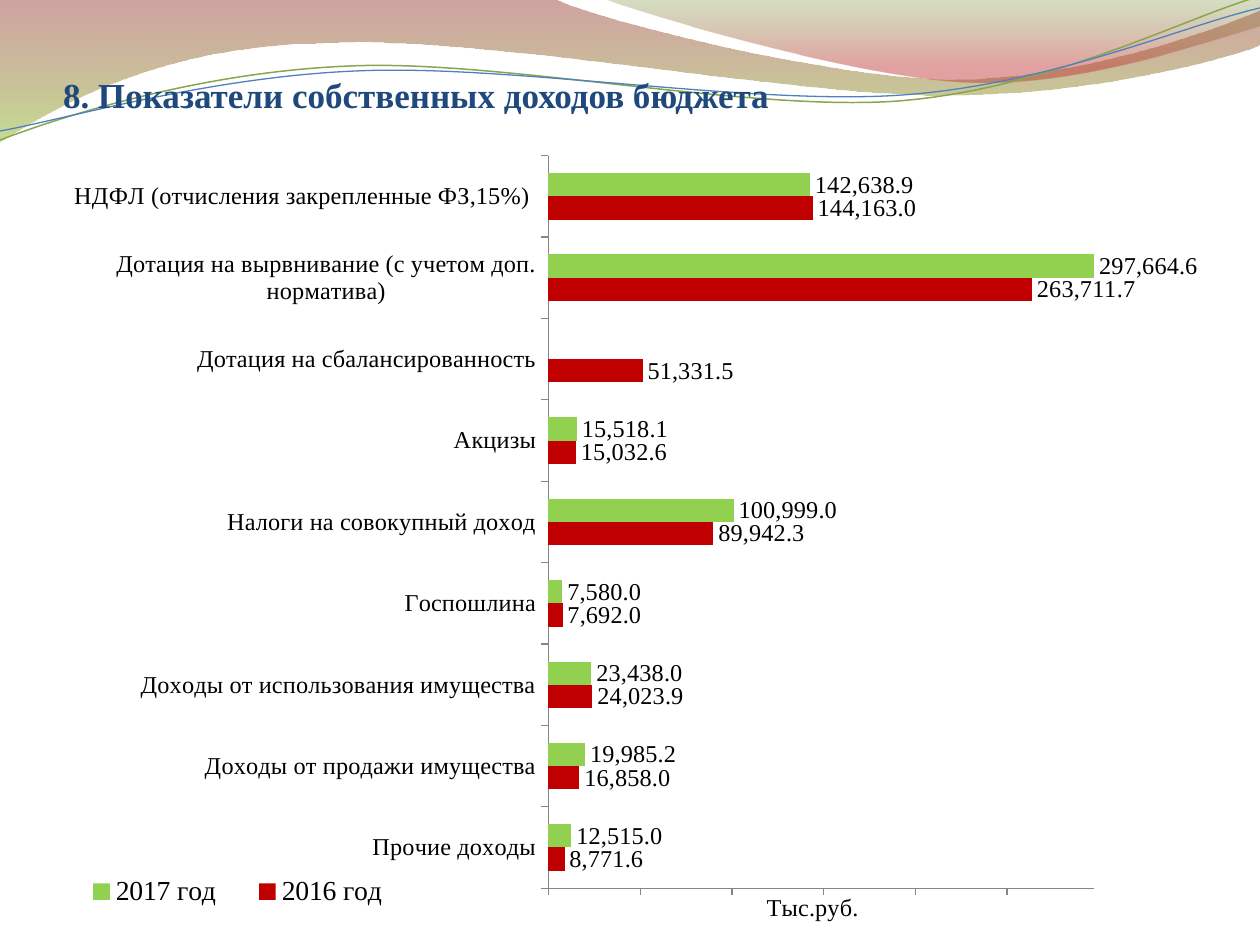
import dataclasses

import pptx
import pptx.chart.data
import pptx.dml.color
import pptx.enum.chart
import pptx.enum.text
import pptx.oxml
import pptx.oxml.ns
import pptx.util


@dataclasses.dataclass(frozen=True)
class Theme:
    font: str = "Times New Roman"
    title: str = "1F497D"
    text: str = "000000"
    axis: str = "868686"
    year_2016: str = "C00000"
    year_2017: str = "92D050"
    green_line: str = "89A54F"
    blue_line: str = "4F81BD"
    left_wave: tuple = ((0, "973330", 45), (1, "95C238", 55))
    right_wave: tuple = ((0, "769537", 30), (0.8, "BE3330", 45))
    title_size: int = 20
    legend_size: int = 16
    label_size: int = 14


THEME = Theme()
EMU_PER_PX = 914400 / 126
CHART_WIDTH, CHART_HEIGHT = 1134, 774
NUMBER_FORMAT = "#,##0.0"

LEFT_WAVE = [
    (0, 0), (554, -1),
    (600, 21, 837, 79, 955, 79), (1075, 79, 1207, 33, 1260, 11),
    (1261, 45),
    (1239, 55, 1096, 96, 940, 95), (784, 95, 481, 35, 324, 43),
    (163, 45, 58, 105, -1, 142),
]
RIGHT_WAVE = [
    (604, -1),
    (641, 14, 859, 78, 969, 82), (1079, 87, 1211, 40, 1260, 26),
    (1260, 0),
]
GREEN_LINE = [
    (0, 140),
    (60, 117, 199, 72, 349, 66), (498, 59, 747, 112, 898, 101),
    (1050, 89, 1182, 19, 1257, -3),
]
BLUE_LINE = [
    (0, 131),
    (59, 121, 207, 77, 357, 71), (508, 64, 752, 106, 903, 95),
    (1053, 84, 1182, 26, 1260, 8),
]
INCOME = [
    ("Прочие доходы", 8771.6, 12515),
    ("Доходы от продажи имущества", 16858, 19985.2),
    (" Доходы от использования имущества", 24023.9, 23438),
    ("Госпошлина", 7692, 7580),
    ("Налоги на совокупный доход", 89942.3, 100999),
    ("Акцизы", 15032.6, 15518.1),
    ("Дотация на сбалансированность", 51331.5, None),
    ("Дотация на вырвнивание (с учетом доп. норматива)", 263711.7, 297664.6),
    ("НДФЛ (отчисления закрепленные ФЗ,15%) ", 144163, 142638.9),
]


def px(n):
    return pptx.util.Emu(round(n * EMU_PER_PX))


def rgb(color):
    return pptx.dml.color.RGBColor.from_string(color)


def new_element(tag, **attributes):
    element = pptx.oxml.xmlchemy.OxmlElement(tag)
    for name, value in attributes.items():
        element.set(name, str(value))
    return element


def set_font(font, size, color=THEME.text, bold=False):
    font.name = THEME.font
    font.size = pptx.util.Pt(size)
    font.bold = bold
    font.color.rgb = rgb(color)


def add_outline(slide, outline, closed):
    points = [(px(part[-2]), px(part[-1])) for part in outline]
    builder = slide.shapes.build_freeform(*points[0])
    builder.add_line_segments(points[1:], close=closed)
    sp = builder.convert_to_shape()
    sp.shadow.inherit = False
    for segment, part in zip(sp._element.xpath(".//a:lnTo"), outline[1:]):
        if len(part) == 6:
            curve = new_element("a:cubicBezTo")
            for x, y in zip(part[::2], part[1::2]):
                curve.append(new_element("a:pt", x=px(x) - sp.left, y=px(y) - sp.top))
            segment.getparent().replace(segment, curve)
    return sp


def add_wave(slide, outline, stops):
    sp = add_outline(slide, outline, closed=True)
    sp.line.fill.background()
    sp.fill.gradient()
    sp.fill.gradient_angle = 270
    for stop, (position, color, _) in zip(sp.fill.gradient_stops, stops):
        stop.position = position
        stop.color.rgb = rgb(color)
    for clr, (_, _, opacity) in zip(sp._element.spPr.xpath(".//a:gs/a:srgbClr"), stops):
        clr.append(new_element("a:alpha", val=opacity * 1000))


def add_curve(slide, outline, color, width):
    sp = add_outline(slide, outline, closed=False)
    sp.fill.background()
    sp.line.color.rgb = rgb(color)
    sp.line.width = pptx.util.Pt(width)


def set_title(slide, text):
    sp = slide.shapes.title
    slide.shapes._spTree.append(sp._element)
    sp.left, sp.top, sp.width, sp.height = px(63), px(67), px(1134), px(49)
    tf = sp.text_frame
    tf.text = text
    tf.word_wrap = True
    tf.auto_size = pptx.enum.text.MSO_AUTO_SIZE.NONE
    tf.vertical_anchor = pptx.enum.text.MSO_ANCHOR.BOTTOM
    tf.margin_left = tf.margin_right = tf.margin_bottom = 0
    tf.margin_top = px(6)
    p = tf.paragraphs[0]
    p.alignment = pptx.enum.text.PP_ALIGN.LEFT
    set_font(p.font, THEME.title_size, THEME.title, bold=True)


def place(element, index, x, y, size=None, inner=False):
    for old in element.findall(pptx.oxml.ns.qn("c:layout")):
        element.remove(old)
    settings = {"layoutTarget": "inner"} if inner else {}
    settings.update(xMode="edge", yMode="edge", x=x / CHART_WIDTH, y=y / CHART_HEIGHT)
    if size:
        settings.update(w=size[0] / CHART_WIDTH, h=size[1] / CHART_HEIGHT)
    layout = new_element("c:layout")
    manual = new_element("c:manualLayout")
    layout.append(manual)
    for name, value in settings.items():
        manual.append(new_element("c:" + name, val=value))
    element.insert(index, layout)


def format_series(series, color):
    series.format.fill.solid()
    series.format.fill.fore_color.rgb = rgb(color)
    series.invert_if_negative = False
    labels = series.data_labels
    labels.show_value = True
    labels.number_format = NUMBER_FORMAT
    labels.number_format_is_linked = False
    labels.position = pptx.enum.chart.XL_LABEL_POSITION.OUTSIDE_END
    set_font(labels.font, THEME.label_size)


def format_axes(chart):
    for axis in (chart.category_axis, chart.value_axis):
        axis.has_major_gridlines = False
        axis.major_tick_mark = pptx.enum.chart.XL_TICK_MARK.OUTSIDE
        axis.format.line.color.rgb = rgb(THEME.axis)
        set_font(axis.tick_labels.font, THEME.label_size)
    axis = chart.value_axis
    axis.minimum_scale, axis.maximum_scale, axis.major_unit = 1, 297670, 50000
    axis.tick_labels.number_format = NUMBER_FORMAT
    axis.tick_labels.number_format_is_linked = False
    axis.tick_label_position = pptx.enum.chart.XL_TICK_LABEL_POSITION.NONE
    p = axis.axis_title.text_frame.paragraphs[0]
    p.text = "Тыс.руб."
    set_font(p.font, THEME.label_size)
    place(axis.axis_title._element, 1, 706, 743)


def add_income_chart(slide):
    names, values_2016, values_2017 = zip(*INCOME)
    data = pptx.chart.data.CategoryChartData(number_format=NUMBER_FORMAT)
    data.categories = names
    data.add_series("2016 год", values_2016)
    data.add_series("2017 год ", values_2017)
    kind = pptx.enum.chart.XL_CHART_TYPE.BAR_CLUSTERED
    chart = slide.shapes.add_chart(
        kind, px(64), px(155), px(CHART_WIDTH), px(CHART_HEIGHT), data
    ).chart
    chart.has_title = False
    set_font(chart.font, THEME.label_size)
    plot = chart.plots[0]
    plot.vary_by_categories = False
    plot.gap_width, plot.overlap = 150, 0
    for series, color in zip(plot.series, (THEME.year_2016, THEME.year_2017)):
        format_series(series, color)
    format_axes(chart)
    place(chart._chartSpace.chart.plotArea, 0, 490, 0, (552, 744), inner=True)
    chart.has_legend = True
    chart.legend.position = pptx.enum.chart.XL_LEGEND_POSITION.BOTTOM
    chart.legend.include_in_layout = True
    set_font(chart.legend.font, THEME.legend_size)
    place(chart.legend._element, 1, 2, 739, (347, 46))


def main():
    prs = pptx.Presentation()
    prs.slide_width, prs.slide_height = px(1260), px(945)
    slide = prs.slides.add_slide(prs.slide_layouts[5])
    add_wave(slide, LEFT_WAVE, THEME.left_wave)
    add_wave(slide, RIGHT_WAVE, THEME.right_wave)
    add_curve(slide, GREEN_LINE, THEME.green_line, 0.85)
    add_curve(slide, BLUE_LINE, THEME.blue_line, 0.75)
    set_title(slide, "8. Показатели собственных доходов бюджета")
    add_income_chart(slide)
    prs.save("out.pptx")


if __name__ == "__main__":
    main()
